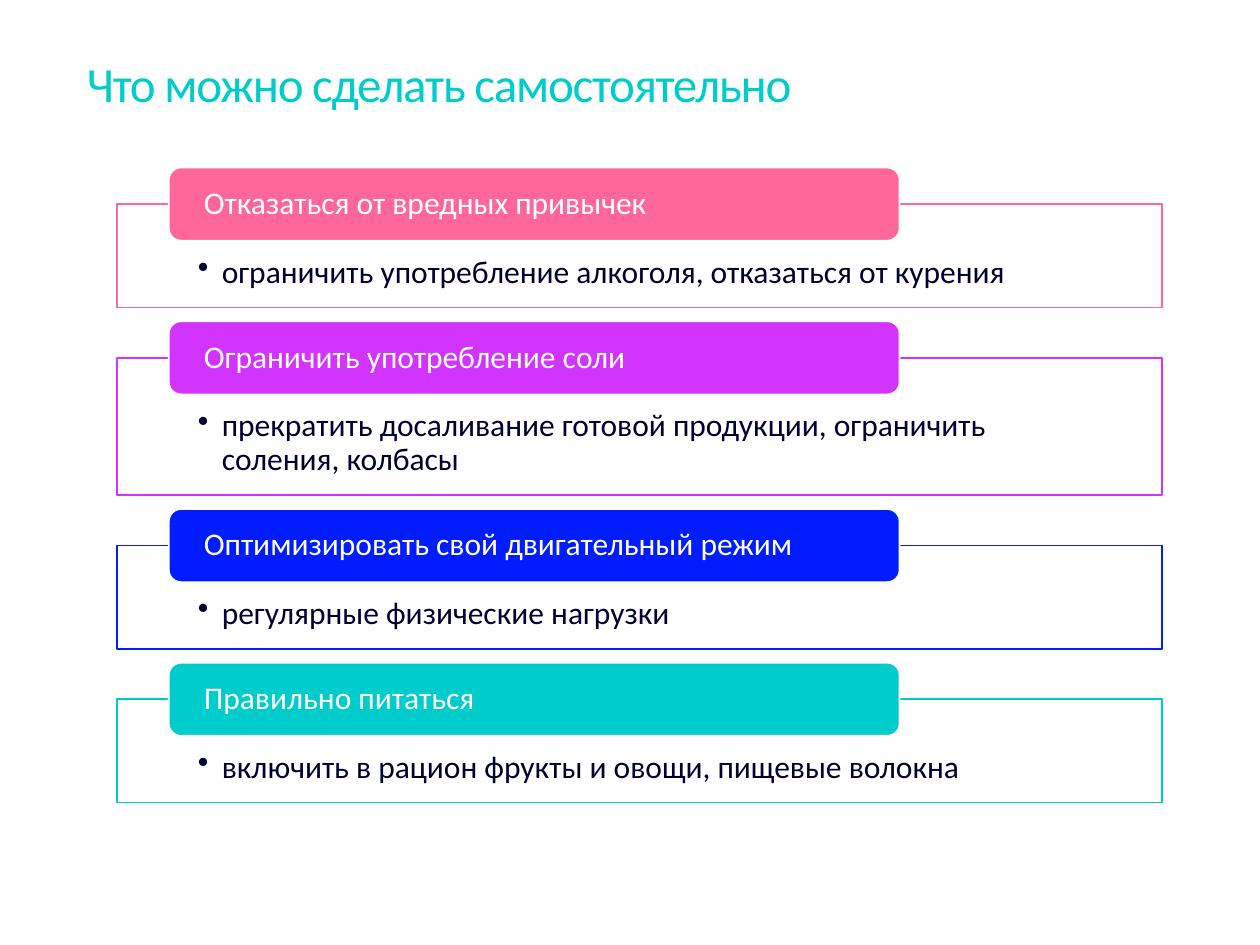
"""Build a slide with four self-care steps, each a label over a framed bullet."""
import pptx
import pptx.util
import pptx.dml.color
import pptx.enum.shapes
import pptx.enum.text
import pptx.oxml.ns
import lxml.etree

Pt = pptx.util.Pt
Color = pptx.dml.color.RGBColor.from_string
Kind = pptx.enum.shapes.MSO_SHAPE
Anchor = pptx.enum.text.MSO_ANCHOR
Align = pptx.enum.text.PP_ALIGN
qn = pptx.oxml.ns.qn

theme = {"font": "Calibri", "head": 28, "text": 18, "title": "00CCCC",
         "ink": "000033", "paper": "FFFFFF"}

steps = [
    ("FF6699", 1, "Отказаться от вредных привычек",
     "ограничить употребление алкоголя, отказаться от курения"),
    ("D233FF", 2, "Ограничить употребление соли",
     "прекратить досаливание готовой продукции, ограничить соления, колбасы"),
    ("001CFF", 1, "Оптимизировать свой двигательный режим",
     "регулярные физические нагрузки"),
    ("00CCCC", 1, "Правильно питаться",
     "включить в рацион фрукты и овощи, пищевые волокна"),
]

deck = pptx.Presentation()
deck.slide_width = pptx.util.Inches(10)
deck.slide_height = pptx.util.Inches(7.5)
slide = deck.slides.add_slide(deck.slide_layouts[5])
unit = deck.slide_width / 100


def write(shape, text, size, color, edges, anchor, lines):
    """Fill a shape with one formatted paragraph and return its paragraph."""
    frame = shape.text_frame
    left, top, right, base = (int(edge * unit) for edge in edges)
    form = {"word_wrap": True, "vertical_anchor": anchor, "margin_left": left,
            "margin_top": top, "margin_right": right, "margin_bottom": base}
    for name, value in form.items():
        setattr(frame, name, value)
    para = frame.paragraphs[0]
    para.alignment = Align.LEFT
    para.line_spacing = lines
    run = para.add_run()
    run.text = text
    for name, value in {"name": theme["font"], "size": Pt(size)}.items():
        setattr(run.font, name, value)
    run.font.color.rgb = Color(color)
    return para


def block(kind, spot, fill, line):
    """Add a filled and outlined shape, placed in grid units."""
    shape = slide.shapes.add_shape(kind, *(int(side * unit) for side in spot))
    shape.shadow.inherit = False
    shape.fill.solid()
    shape.fill.fore_color.rgb = Color(fill)
    shape.line.color.rgb = Color(line)
    shape.line.width = Pt(1)
    return shape


title = slide.shapes.title
spot = {"left": 6.9, "top": 4, "width": 86.2, "height": 10.3}
for name, value in spot.items():
    setattr(title, name, int(value * unit))
para = write(title, "Что можно сделать самостоятельно", theme["head"],
             theme["title"], (0, 0.5, 0, 0.5), Anchor.TOP, Pt(32))
para.runs[0].font._element.set("spc", "-70")

top, gap, rise = 16.2, 4, 2.9
for color, rows, label, advice in steps:
    high = 5.5 + 2.7 * rows
    box = block(Kind.RECTANGLE, (9.3, top, 82.9, high), theme["paper"], color)
    tint = box.fill._xPr.find(".//" + qn("a:srgbClr"))
    lxml.etree.SubElement(tint, qn("a:alpha"), val="90000")
    para = write(box, advice, theme["text"], theme["ink"],
                 (6.4, 4.1, 6.4, 1.4), Anchor.TOP, 0.9)
    para.level = 1
    props = para._p.get_or_add_pPr()
    for name, value in {"marL": 1.9, "indent": -1.9}.items():
        props.set(name, str(int(value * unit)))
    lxml.etree.SubElement(props, qn("a:buChar"), char="•")

    tab = block(Kind.ROUNDED_RECTANGLE, (13.4, top - rise, 58, 2 * rise),
                color, theme["paper"])
    write(tab, label, theme["text"], theme["paper"],
          (2.5, 0, 2.5, 0), Anchor.MIDDLE, 0.9)
    top += high + gap

deck.save("out.pptx")
